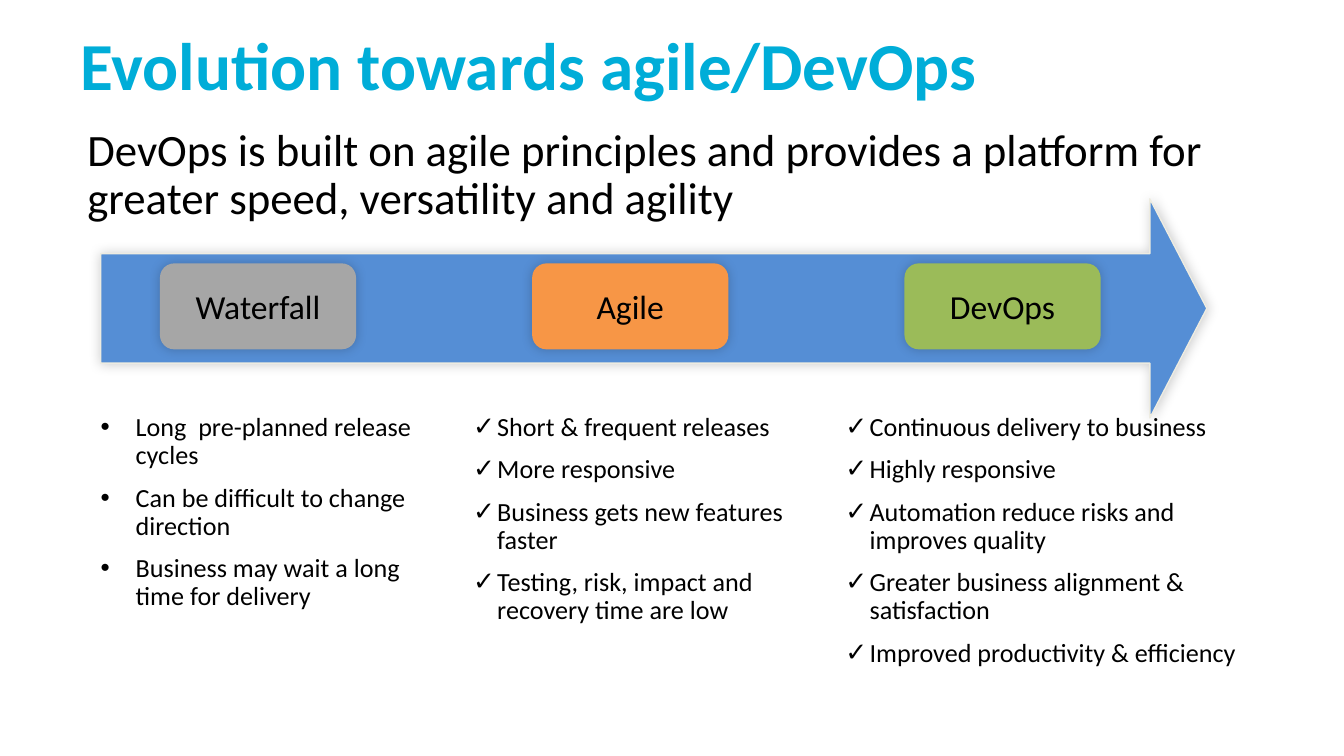
from pptx import Presentation
from pptx.dml.color import RGBColor
from pptx.enum.shapes import MSO_SHAPE
from pptx.enum.text import MSO_ANCHOR, MSO_AUTO_SIZE, PP_ALIGN
from pptx.oxml import parse_xml
from pptx.oxml.ns import nsdecls
from pptx.util import Inches, Pt

ARROW = MSO_SHAPE.RIGHT_ARROW
ROUND = MSO_SHAPE.ROUNDED_RECTANGLE
MIDDLE, TOP = MSO_ANCHOR.MIDDLE, MSO_ANCHOR.TOP
LEFT, CENTER = PP_ALIGN.LEFT, PP_ALIGN.CENTER
FIXED = MSO_AUTO_SIZE.NONE

COLORS = {
    "title": "00ADD8", "text": "000000", "arrow": "558ED5", "edge": "EEECE1",
    "gray": "A6A6A6", "orange": "F79646", "green": "9BBB59",
}
STAGES = [
    ("Waterfall", "gray", 2.77, "•", 0.26, [
        "Long  pre-planned release cycles",
        "Can be difficult to change direction",
        "Business may wait a long time for delivery"]),
    ("Agile", "orange", 2.67, "✓", 0.18, [
        "Short & frequent releases",
        "More responsive",
        "Business gets new features faster",
        "Testing, risk, impact and recovery time are low"]),
    ("DevOps", "green", 3.28, "✓", 0.18, [
        "Continuous delivery to business",
        "Highly responsive",
        "Automation reduce risks and improves quality",
        "Greater business alignment & satisfaction",
        "Improved productivity & efficiency"]),
]


def color(name):
    """Return the named colour."""
    return RGBColor.from_string(COLORS[name])


def write(frame, lines, size=14, ink="text", bold=False, align=LEFT,
          anchor=TOP, font="Calibri", bullet=None, indent=0, space=None, gap=0):
    """Fill a text frame with one formatted paragraph per line."""
    frame.word_wrap = True
    frame.auto_size = FIXED
    frame.vertical_anchor = anchor
    for i, line in enumerate(lines):
        para = frame.add_paragraph() if i else frame.paragraphs[0]
        para.alignment = align
        if space:
            para.line_spacing = space
        if i:
            para.space_before = Pt(gap)
        if bullet:
            props = para._p.get_or_add_pPr()
            props.set("marL", str(Inches(indent)))
            props.set("indent", str(-Inches(indent)))
            for mark in ('buFont {} typeface="Arial"', 'buChar {} char="%s"' % bullet):
                props.append(parse_xml(f'<a:{mark.format(nsdecls("a"))}/>'))
        run = para.add_run()
        run.text = line
        run.font.name = font
        run.font.size = Pt(size)
        run.font.bold = bold
        run.font.color.rgb = color(ink)


class Deck:
    """Hold the style and the current slide."""

    def __init__(self):
        """Start a wide deck with one title-only slide."""
        self.file = Presentation()
        self.file.slide_width = Inches(10)
        self.file.slide_height = Inches(10) * 9 // 16
        self.slide = self.file.slides.add_slide(self.file.slide_layouts[5])
        self.shapes = self.slide.shapes

    def title(self, text, x, y, w, h):
        """Place and fill the title."""
        box = self.shapes.title
        box.left, box.top, box.width, box.height = map(Inches, (x, y, w, h))
        write(box.text_frame, [text], size=36, ink="title", bold=True,
              anchor=MIDDLE)

    def shape(self, kind, fill, x, y, w, h, edge=None):
        """Add a filled shape with a soft shadow."""
        item = self.shapes.add_shape(kind, *map(Inches, (x, y, w, h)))
        item.fill.solid()
        item.fill.fore_color.rgb = color(fill)
        if edge:
            item.line.color.rgb = color(edge)
            item.line.width = Pt(0.75)
        else:
            item.line.fill.background()
        item.shadow.inherit = False
        item._element.spPr.find("{*}effectLst").append(parse_xml(
            f'<a:outerShdw {nsdecls("a")} blurRad="{Pt(6)}" dist="0" '
            'dir="18900000" rotWithShape="0"><a:srgbClr val="000000">'
            '<a:alpha val="20000"/></a:srgbClr></a:outerShdw>'))
        return item

    def badge(self, text, fill, x, y, w, h):
        """Add a labelled rounded box."""
        item = self.shape(ROUND, fill, x, y, w, h)
        write(item.text_frame, [text], size=18, align=CENTER, anchor=MIDDLE)

    def text(self, lines, x, y, w, h, **style):
        """Add a text box with tight margins."""
        box = self.shapes.add_textbox(*map(Inches, (x, y, w, h)))
        frame = box.text_frame
        frame.margin_left = frame.margin_right = Inches(0.07)
        frame.margin_top = frame.margin_bottom = Inches(0.04)
        write(frame, lines, space=0.9, gap=7.5, **style)


def main():
    """Build and save the slide."""
    deck = Deck()
    deck.title("Evolution towards agile/DevOps", 0.5, -0.01, 9, 0.97)
    arrow = deck.shape(ARROW, "arrow", 0.75, 1.48, 8.23, 1.63, edge="edge")
    arrow.adjustments[1] = 0.26
    for i, (name, fill, width, mark, indent, points) in enumerate(STAGES):
        left = 0.68 + 2.77 * i
        deck.badge(name, fill, left + 0.51, 1.96, 1.46, 0.64)
        deck.text(points, left, 3.04, width, 1.81, bullet=mark, indent=indent)
    deck.text(["DevOps is built on agile principles and provides a platform "
               "for greater speed, versatility and agility"],
              0.58, 0.91, 8.62, 1.89, size=24)
    deck.file.save("out.pptx")


if __name__ == "__main__":
    main()
